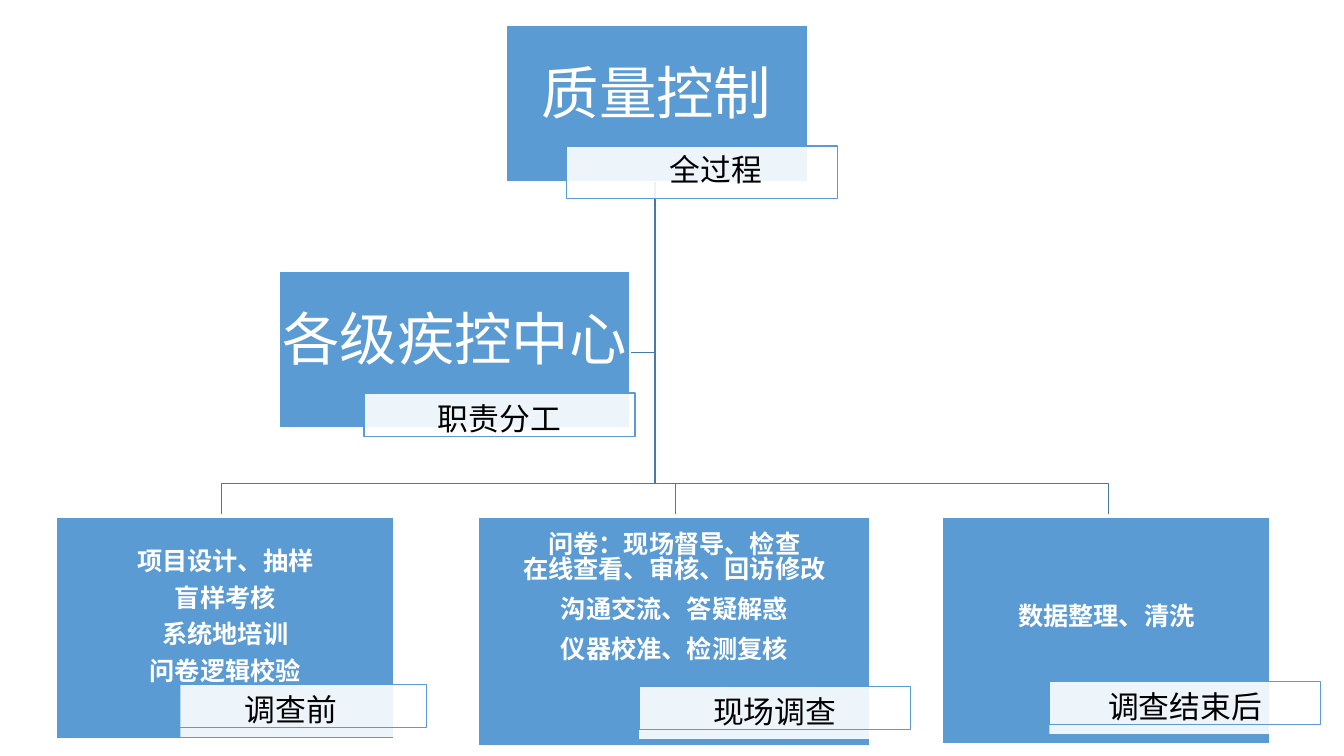
from collections import namedtuple
from dataclasses import dataclass

from lxml import etree
from pptx import Presentation
from pptx.dml.color import RGBColor
from pptx.enum.shapes import MSO_SHAPE
from pptx.enum.text import MSO_ANCHOR, MSO_AUTO_SIZE, PP_ALIGN
from pptx.oxml.ns import qn
from pptx.util import Inches, Pt

RECTANGLE = MSO_SHAPE.RECTANGLE
MIDDLE = MSO_ANCHOR.MIDDLE
CENTER = PP_ALIGN.CENTER
NO_AUTOFIT = MSO_AUTO_SIZE.NONE
TITLE_ONLY = 5

# The slide is a grid of 75 rows; all lengths below count its square cells.
COLUMNS, ROWS = 133.33, 75
CELL = Inches(7.5) / ROWS
CELLS_PER_POINT = Pt(1) / CELL


@dataclass(frozen=True)
class Theme:
    font: str = "Noto Sans CJK SC"
    blue: RGBColor = RGBColor(0x5B, 0x9B, 0xD4)
    trunk: RGBColor = RGBColor(0x46, 0x7A, 0xA9)
    white: RGBColor = RGBColor(0xFF, 0xFF, 0xFF)
    black: RGBColor = RGBColor(0, 0, 0)
    heading_size: int = 41
    caption_size: int = 22
    item_size: int = 18
    line_width: float = 0.96
    veil_opacity: int = 90


THEME = Theme()
HEADING = {"size": Pt(THEME.heading_size), "bold": False}
ITEM = {"size": Pt(THEME.item_size), "bold": True}
CAPTION = {"size": Pt(THEME.caption_size), "bold": False}

Box = namedtuple("Box", "left top width height")
# Label: top and height within its panel, then line pitch and gap in points.
Label = namedtuple("Label", "lines top height style pitch gap inset", defaults=(1.0, 0, 0.1))
# Caption: place within its panel, frame height, frame shift and text insets.
Caption = namedtuple("Caption", "text left top height shift indent above below",
                     defaults=(4.3, 0, 0, 0.6, 0))
Panel = namedtuple("Panel", "box label caption")

CAPTION_WIDTH, VEIL_HEIGHT = 26.9, 5.2
BUS_ROW = 47.7

ROOT = Panel(
    Box(50.2, 2.5, 29.9, 15.5),
    Label(["质量控制"], 3, 7.1, HEADING),
    Caption("全过程", 6, 12, VEIL_HEIGHT, indent=2.7, above=0, below=0.6))
BRANCH = Panel(
    Box(27.7, 26.9, 34.8, 15.5),
    Label(["各级疾控中心"], 3, 7.1, HEADING),
    Caption("职责分工", 8.4, 12.1))
STAGES = [
    Panel(Box(5.6, 51.3, 33.5, 22),
          Label(["项目设计、抽样", "盲样考核", "系统地培训", "问卷逻辑校验"],
                2.1, 14.6, ITEM, pitch=Pt(26)),
          Caption("调查前", 12.3, 16.6, shift=-2.5)),
    Panel(Box(47.5, 51.3, 38.8, 22.7),
          Label(["问卷：现场督导、检查\v在线查看、审核、回访修改",
                 "沟通交流、答疑解惑", "仪器校准、检测复核"],
                0.9, 13.8, ITEM, pitch=Pt(18), gap=10.6, inset=0.6),
          Caption("现场调查", 15.9, 16.8)),
    Panel(Box(93.5, 51.3, 32.5, 22.5),
          Label(["数据整理、清洗"], 8.1, 3.3, ITEM),
          Caption("调查结束后", 10.6, 16.3)),
]


def cells(*counts):
    return [round(count * CELL) for count in counts]


def apply(target, values):
    for name, value in values.items():
        setattr(target, name, value)


def write(shape, lines, style, color, insets, pitch=1.0, gap=0):
    """Fill a shape with centred paragraphs; insets are left, top, bottom."""
    left, top, bottom = cells(*insets)
    frame = shape.text_frame
    apply(frame, {"word_wrap": True, "auto_size": NO_AUTOFIT,
                  "vertical_anchor": MIDDLE, "margin_left": left,
                  "margin_right": 0, "margin_top": top, "margin_bottom": bottom})
    frame.text = "\n".join(lines)
    for number, para in enumerate(frame.paragraphs):
        apply(para, {"alignment": CENTER, "line_spacing": pitch,
                     "space_before": Pt(gap if number else 0), "space_after": Pt(0)})
        for span in para.runs:
            apply(span.font, {**style, "name": THEME.font})
            span.font.color.rgb = color
            east_asian = etree.SubElement(span.font._element, qn("a:ea"))
            east_asian.set("typeface", THEME.font)


def paint(shape, fill=None, line=None):
    shape.shadow.inherit = False
    if fill is None:
        shape.fill.background()
    else:
        shape.fill.solid()
        shape.fill.fore_color.rgb = fill
    if line is None:
        shape.line.fill.background()
    else:
        shape.line.color.rgb = line
        shape.line.width = Pt(THEME.line_width)


def rectangle(page, box, **colors):
    shape = page.shapes.add_shape(RECTANGLE, *cells(*box))
    paint(shape, **colors)
    return shape


def draw_link(page, points):
    builder = page.shapes.build_freeform(*points[0], scale=CELL)
    builder.add_line_segments(points[1:], close=False)
    paint(builder.convert_to_shape(), line=THEME.trunk)


def draw_links(page):
    root, branch = ROOT.box, BRANCH.box
    trunk = root.left + root.width / 2
    start = (trunk, root.top + root.height)
    joint = branch.top + branch.height / 2
    draw_link(page, [start, (trunk, joint), (branch.left + branch.width, joint)])
    for stage in reversed(STAGES):
        middle = stage.box.left + stage.box.width / 2
        draw_link(page, [start, (trunk, BUS_ROW), (middle, BUS_ROW),
                         (middle, stage.box.top)])


def draw_caption(page, box, caption):
    left, top = box.left + caption.left, box.top + caption.top
    veil = rectangle(page, Box(left, top, CAPTION_WIDTH, VEIL_HEIGHT), fill=THEME.white)
    color = veil.fill._xPr.find(qn("a:solidFill"))[0]
    etree.SubElement(color, qn("a:alpha")).set("val", str(THEME.veil_opacity * 1000))
    frame = rectangle(page, Box(left + caption.shift, top, CAPTION_WIDTH, caption.height),
                      line=THEME.blue)
    write(frame, [caption.text], CAPTION, THEME.black,
          (caption.indent, caption.above, caption.below))


def draw_panel(page, panel, title=None):
    """Draw a blue panel with label and caption; title replaces the text box."""
    box, label = panel.box, panel.label
    back = rectangle(page, box, fill=THEME.blue, line=THEME.white)
    rows = "\v".join(label.lines).split("\v")
    width = max(map(len, rows)) * label.style["size"].pt * CELLS_PER_POINT + 0.3
    place = cells(box.left + (box.width - width) / 2, box.top + label.top,
                  width, label.height)
    if title is None:
        title = page.shapes.add_textbox(*place)
    else:
        apply(title, dict(zip(("left", "top", "width", "height"), place)))
        back.element.addnext(title.element)
    write(title, label.lines, label.style, THEME.white,
          (0, label.inset, 0), label.pitch, label.gap)
    draw_caption(page, box, panel.caption)


def main():
    deck = Presentation()
    deck.slide_width, deck.slide_height = cells(COLUMNS, ROWS)
    page = deck.slides.add_slide(deck.slide_layouts[TITLE_ONLY])
    draw_links(page)
    draw_panel(page, ROOT, title=page.shapes.title)
    for panel in [*STAGES, BRANCH]:
        draw_panel(page, panel)
    deck.save("out.pptx")


if __name__ == "__main__":
    main()
